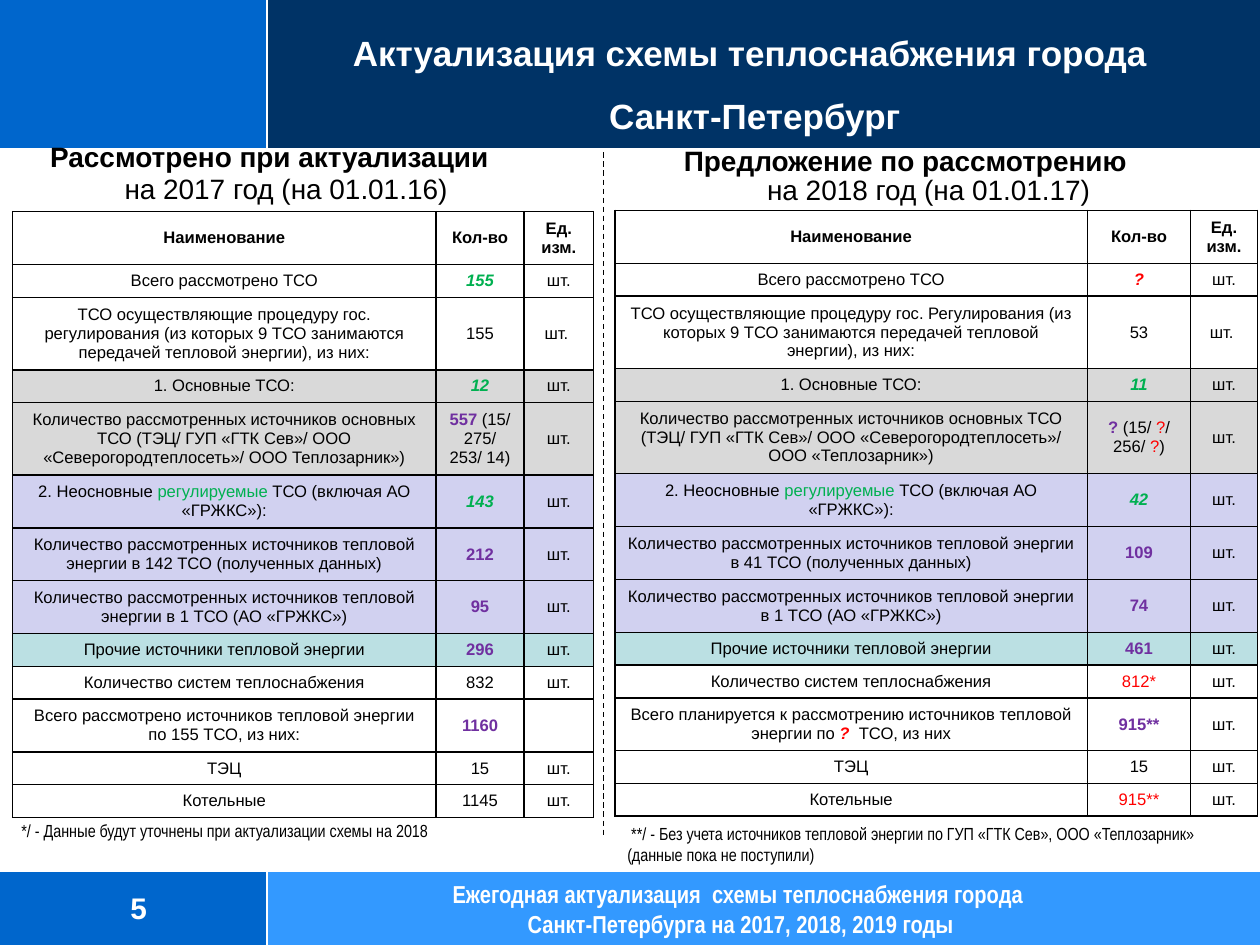
from lxml.etree import SubElement
from pptx import Presentation
from pptx.dml.color import RGBColor
from pptx.enum.dml import MSO_LINE
from pptx.enum.shapes import MSO_CONNECTOR, MSO_SHAPE
from pptx.enum.text import MSO_ANCHOR, PP_ALIGN
from pptx.oxml.ns import qn
from pptx.util import Inches, Pt

COLORS = {
    "black": "000000", "white": "FFFFFF", "navy": "003366", "blue": "0066CC",
    "sky": "3399FF", "green": "00B050", "purple": "7030A0", "red": "FF0000",
    "gray": "D9D9D9", "lilac": "D1D1F0", "teal": "BBE0E3",
}
STYLES = {
    "plain": {"color": "black", "bold": False},
    "head": {"color": "black", "bold": True},
    "total": {"color": "green", "bold": True, "italic": True},
    "unknown": {"color": "red", "bold": True, "italic": True},
    "sources": {"color": "purple", "bold": True},
    "green": {"color": "green", "bold": False},
    "red": {"color": "red", "bold": False},
    "white": {"color": "white", "bold": True},
}


def rgb(name):
    return RGBColor.from_string(COLORS[name])


class SlideBuilder:
    """Holds the fonts and the slide, and draws each kind of element."""

    font, narrow = "Arial", "Arial Narrow"

    def __init__(self, slide):
        self.shapes = slide.shapes

    def rect(self, x, y, w, h, fill):
        sp = self.shapes.add_shape(MSO_SHAPE.RECTANGLE, *map(Inches, (x, y, w, h)))
        sp.shadow.inherit = False
        sp.fill.solid()
        sp.fill.fore_color.rgb = rgb(fill)
        sp.line.fill.background()

    def line(self, x1, y1, x2, y2, color="white", width=1.25, dash=None):
        cn = self.shapes.add_connector(
            MSO_CONNECTOR.STRAIGHT, *map(Inches, (x1, y1, x2, y2)))
        cn.line.color.rgb = rgb(color)
        cn.line.width = Pt(width)
        if dash:
            cn.line.dash_style = dash
        SubElement(cn._element.spPr, qn("a:effectLst"))

    def runs(self, p, content, size, style="plain", font=None):
        """Fill a paragraph from a string or a list of (text, style) pairs."""
        if isinstance(content, str):
            content = [(content, style)]
        for text, name in content:
            r = p.add_run()
            r.text = text
            fmt = {"name": font or self.font, "size": Pt(size), **STYLES[name]}
            r.font.color.rgb = rgb(fmt.pop("color"))
            for key, value in fmt.items():
                setattr(r.font, key, value)

    def text(self, x, y, w, h, lines, size, style="plain", font=None,
             align=PP_ALIGN.LEFT, wrap=True, flush=False):
        sp = self.shapes.add_textbox(*map(Inches, (x, y, w, h)))
        tf = sp.text_frame
        fmt = {"word_wrap": wrap}
        if flush:
            sides = ("margin_left", "margin_right", "margin_top", "margin_bottom")
            fmt |= {"vertical_anchor": MSO_ANCHOR.MIDDLE, **dict.fromkeys(sides, 0)}
        for key, value in fmt.items():
            setattr(tf, key, value)
        for i, content in enumerate(lines):
            p = tf.add_paragraph() if i else tf.paragraphs[0]
            p.alignment = align
            self.runs(p, content, size, style, font)
        return tf

    def cell(self, cell, content, style, fill):
        cell.vertical_anchor = MSO_ANCHOR.MIDDLE
        p = cell.text_frame.paragraphs[0]
        p.alignment = PP_ALIGN.CENTER
        p.font.size = Pt(9.5)
        if content:
            self.runs(p, content, 9.5, style)
        tc_pr = cell._tc.get_or_add_tcPr()
        for side in ("lnL", "lnR", "lnT", "lnB"):
            ln = SubElement(tc_pr, qn(f"a:{side}"), w=str(Pt(1)))
            solid = SubElement(ln, qn("a:solidFill"))
            SubElement(solid, qn("a:srgbClr"), val=COLORS["black"])
        cell.fill.solid()
        cell.fill.fore_color.rgb = rgb(fill)

    def table(self, x, y, widths, rows):
        """Draw rows given as (height, fill, style, cell contents)."""
        height = sum(row[0] for row in rows)
        frame = self.shapes.add_table(
            len(rows), len(widths), *map(Inches, (x, y, sum(widths), height)))
        tbl = frame.table
        for col, width in zip(tbl.columns, widths):
            col.width = Inches(width)
        for i, (row_height, fill, style, contents) in enumerate(rows):
            tbl.rows[i].height = Inches(row_height)
            for j, content in enumerate(contents):
                self.cell(tbl.cell(i, j), content, style, fill)


# Row heights for one, two and three lines of text
ONE, TWO, THREE = 0.26, 0.42, 0.57
UNIT = "шт."
HEADER = ("Наименование", "Кол-во", "Ед. изм.")
SECONDARY = [("2. Неосновные ", "plain"), ("регулируемые ", "green"),
             ("ТСО (включая АО «ГРЖКС»):", "plain")]
BY_SOURCE = "Количество рассмотренных источников тепловой энергии в "
MAIN_SOURCES = ("Количество рассмотренных источников основных ТСО "
                "(ТЭЦ/ ГУП «ГТК Сев»/ ООО «Северогородтеплосеть»/ ООО ")
REGULATED = "(из которых 9 ТСО занимаются передачей тепловой энергии), из них:"


def total(text):
    return [(text, "total")]


def sources(text):
    return [(text, "sources")]


# (height, fill, style, cells for 2017, cells for 2018)
ROWS = [
    (TWO, "white", "head", HEADER, HEADER),
    (ONE, "white", "plain", ("Всего рассмотрено ТСО", total("155"), UNIT),
     ("Всего рассмотрено ТСО", [("?", "unknown")], UNIT)),
    (THREE, "white", "plain",
     ("ТСО осуществляющие процедуру гос. регулирования " + REGULATED, "155", "шт. "),
     ("ТСО осуществляющие процедуру гос. Регулирования " + REGULATED, "53", "шт. ")),
    (ONE, "gray", "plain", ("1. Основные ТСО:", total("12"), UNIT),
     ("1. Основные ТСО:", total("11"), UNIT)),
    (THREE, "gray", "plain",
     (MAIN_SOURCES + "Теплозарник»)",
      [("557 ", "sources"), ("(15/ 275/ 253/ 14)", "plain")], UNIT),
     (MAIN_SOURCES + "«Теплозарник»)",
      [("? ", "sources"), ("(15/ ", "plain"), ("?", "red"),
       ("/ 256/ ", "plain"), ("?", "red"), (")", "plain")], UNIT)),
    (TWO, "lilac", "plain", (SECONDARY, total("143"), UNIT),
     (SECONDARY, total("42"), UNIT)),
    (TWO, "lilac", "plain",
     (BY_SOURCE + "142 ТСО (полученных данных)", sources("212"), UNIT),
     (BY_SOURCE + "41 ТСО (полученных данных)", sources("109"), UNIT)),
    (TWO, "lilac", "plain",
     (BY_SOURCE + "1 ТСО (АО «ГРЖКС»)", sources("95"), UNIT),
     (BY_SOURCE + "1 ТСО (АО «ГРЖКС»)", sources("74"), UNIT)),
    (ONE, "teal", "plain",
     ("Прочие источники тепловой энергии", sources("296"), UNIT),
     ("Прочие источники тепловой энергии", sources("461"), UNIT)),
    (ONE, "white", "plain", ("Количество систем теплоснабжения", "832", UNIT),
     ("Количество систем теплоснабжения", [("812*", "red")], UNIT)),
    (TWO, "white", "plain",
     ("Всего рассмотрено источников тепловой энергии по 155 ТСО, из них:",
      sources("1160"), ""),
     ([("Всего планируется к рассмотрению источников тепловой энергии по ", "plain"),
       ("? ", "unknown"), (" ТСО, из них", "plain")], sources("915**"), UNIT)),
    (ONE, "white", "plain", ("ТЭЦ", "15", UNIT), ("ТЭЦ", "15", UNIT)),
    (ONE, "white", "plain", ("Котельные", "1145", UNIT),
     ("Котельные", [("915**", "red")], UNIT)),
]


def main():
    prs = Presentation()
    prs.slide_width, prs.slide_height = Inches(10), Inches(7.5)
    s = SlideBuilder(prs.slides.add_slide(prs.slide_layouts[6]))

    # Header and footer bands with white rules
    for y, h, color, edge in ((6.91, 0.59, "sky", 6.91), (0, 1.18, "navy", 1.18)):
        s.rect(0, y, 2.12, h, "blue")
        s.rect(2.12, y, 7.88, h, color)
        s.line(2.12, y, 2.12, y + h)
        s.line(0, edge, 10, edge)

    # Title, footer and page number
    center = PP_ALIGN.CENTER
    tf = s.text(2.08, 0, 7.82, 1.17, ["Актуализация схемы теплоснабжения города "],
                20, "white", align=center, flush=True)
    p = tf.paragraphs[0]
    p.line_spacing = 1.5
    p.add_line_break()
    s.runs(p, "Санкт-Петербург", 20, "white")
    s.text(3.38, 6.93, 5, 0.57,
           ["Ежегодная актуализация  схемы теплоснабжения города ",
            "Санкт-Петербурга на 2017, 2018, 2019 годы"],
           14, "white", s.narrow, center)
    s.text(0.1, 6.91, 2, 0.59, ["5"], 17, "white", align=center, flush=True)

    # Column headings and divider
    for x, y, w, heading, style in (
            (0.89, 1.31, 2.8, "на 2017 год (на 01.01.16)", "plain"),
            (5.99, 1.32, 2.8, "на 2018 год (на 01.01.17)", "plain"),
            (0.3, 1.06, 3.79, "Рассмотрено при актуализации", "head"),
            (5.33, 1.09, 3.76, "Предложение по рассмотрению", "head")):
        s.text(x, y, w, 0.37, [heading], 16, style, wrap=False)
    s.line(4.79, 1.21, 4.79, 6.63, "black", 0.75, MSO_LINE.DASH)

    # Tables for the two years
    for side, (x, y, widths) in enumerate(((0.1, 1.68, (3.36, 0.7, 0.55)),
                                           (4.88, 1.67, (3.75, 0.82, 0.53)))):
        s.table(x, y, widths, [(*row[:3], row[3 + side]) for row in ROWS])

    # Footnotes
    s.text(4.88, 6.48, 5.09, 0.44,
           [" **/ - Без учета источников тепловой энергии по ГУП «ГТК Сев», "
            "ООО «Теплозарник» (данные пока не поступили)"], 10, font=s.narrow)
    s.text(0.04, 6.46, 3.51, 0.27,
           [" */ - Данные будут уточнены при актуализации схемы на 2018"],
           10, font=s.narrow)

    prs.save("out.pptx")


if __name__ == "__main__":
    main()
